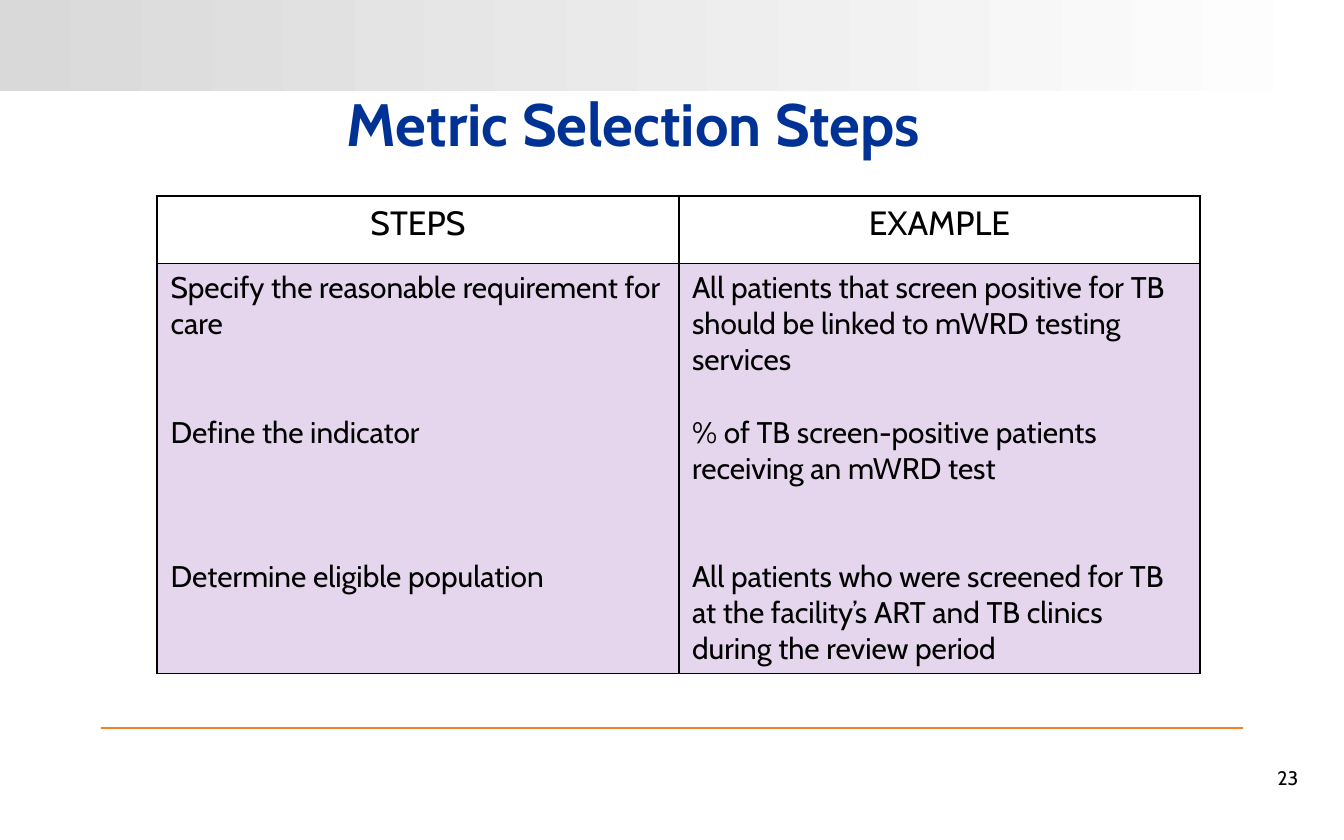
"""Build the Metric Selection Steps slide."""
from lxml.etree import SubElement
from pptx import Presentation
from pptx.dml.color import RGBColor
from pptx.enum.shapes import MSO_CONNECTOR, MSO_SHAPE
from pptx.enum.text import MSO_ANCHOR, MSO_AUTO_SIZE, PP_ALIGN
from pptx.oxml.ns import qn
from pptx.util import Inches, Pt

COLORS = {
    "text": "000000",
    "title": "003296",
    "band_start": "D9D9D9",
    "band_end": "FFFFFF",
    "rule": "F58025",
    "body": "E5D6EE",
}
FONT = "Cabin"
BODY_LINE = 19.3
HEADINGS = ["STEPS", "EXAMPLE"]
COLUMNS = [
    [
        ("Specify the reasonable requirement for care", 0),
        ("Define the indicator", 2),
        ("Determine eligible population", 3),
    ],
    [
        ("All patients that screen positive for TB should be linked to mWRD testing services", 0),
        ("% of TB screen-positive patients receiving an mWRD test", 1),
        ("All patients who were screened for TB at the facility’s ART and TB clinics "
         "during the review period", 2),
    ],
]


def add_text(paragraph, text, size, color="text", bold=False, align=PP_ALIGN.LEFT):
    paragraph.alignment = align
    run = paragraph.add_run()
    run.text = text
    run.font.name = FONT
    run.font.size = Pt(size)
    run.font.bold = bold
    run.font.color.rgb = RGBColor.from_string(COLORS[color])


def add_borders(cell):
    properties = cell._tc.get_or_add_tcPr()
    for side in ("a:lnL", "a:lnR", "a:lnT", "a:lnB"):
        line = SubElement(properties, qn(side), w=str(Pt(1)))
        fill = SubElement(line, qn("a:solidFill"))
        SubElement(fill, qn("a:srgbClr"), val=COLORS["text"])


presentation = Presentation()
presentation.slide_width = Inches(10)
presentation.slide_height = Inches(6.25)
slide = presentation.slides.add_slide(presentation.slide_layouts[5])

band = slide.shapes.add_shape(MSO_SHAPE.RECTANGLE, 0, 0, Inches(10), Inches(0.68))
band.shadow.inherit = False
band.line.fill.background()
band.fill.gradient()
band.fill.gradient_angle = 0
for stop, color in zip(band.fill.gradient_stops, ("band_start", "band_end")):
    stop.color.rgb = RGBColor.from_string(COLORS[color])

rule = slide.shapes.add_connector(
    MSO_CONNECTOR.STRAIGHT, Inches(0.75), Inches(5.42), Inches(9.25), Inches(5.42))
rule.line.color.rgb = RGBColor.from_string(COLORS["rule"])
rule.line.width = Pt(1)
SubElement(rule._element.spPr, qn("a:effectLst"))

title = slide.shapes.title
title.left, title.top = Inches(2.58), Inches(0.68)
title.width, title.height = Inches(4.83), Inches(0.51)
title_frame = title.text_frame
title_frame.auto_size = MSO_AUTO_SIZE.NONE
title_frame.vertical_anchor = MSO_ANCHOR.TOP
title_frame.margin_left = title_frame.margin_right = 0
title_paragraph = title_frame.paragraphs[0]
title_paragraph.line_spacing = 0.85
title_paragraph.space_after = Pt(12)
add_text(title_paragraph, "Metric Selection Steps", 32, "title", bold=True)

number_box = slide.shapes.add_textbox(Inches(7.41), Inches(5.63), Inches(2.25), Inches(0.33))
number_frame = number_box.text_frame
number_frame.word_wrap = True
number_frame.vertical_anchor = MSO_ANCHOR.MIDDLE
number_frame.margin_left = number_frame.margin_right = 0
number_frame.paragraphs[0].line_spacing = 0.9
add_text(number_frame.paragraphs[0], "23", 10.5, align=PP_ALIGN.RIGHT)

table = slide.shapes.add_table(
    2, 2, Inches(1.17), Inches(1.46), Inches(7.76), Inches(3.55)).table
table.first_row = False
table.horz_banding = False
table.rows[0].height = Inches(0.5)
table.rows[1].height = Inches(3.05)

for column, (heading, steps) in enumerate(zip(HEADINGS, COLUMNS)):
    table.columns[column].width = Inches(3.88)
    heading_cell, body_cell = table.cell(0, column), table.cell(1, column)
    add_borders(heading_cell)
    heading_cell.fill.background()
    add_text(heading_cell.text_frame.paragraphs[0], heading, 18, align=PP_ALIGN.CENTER)

    add_borders(body_cell)
    body_cell.fill.solid()
    body_cell.fill.fore_color.rgb = RGBColor.from_string(COLORS["body"])
    body_frame = body_cell.text_frame
    for index, (step, lines_before) in enumerate(steps):
        paragraph = body_frame.add_paragraph() if index else body_frame.paragraphs[0]
        if lines_before:
            paragraph.space_before = Pt(lines_before * BODY_LINE)
        add_text(paragraph, step, 16)

presentation.save("out.pptx")
